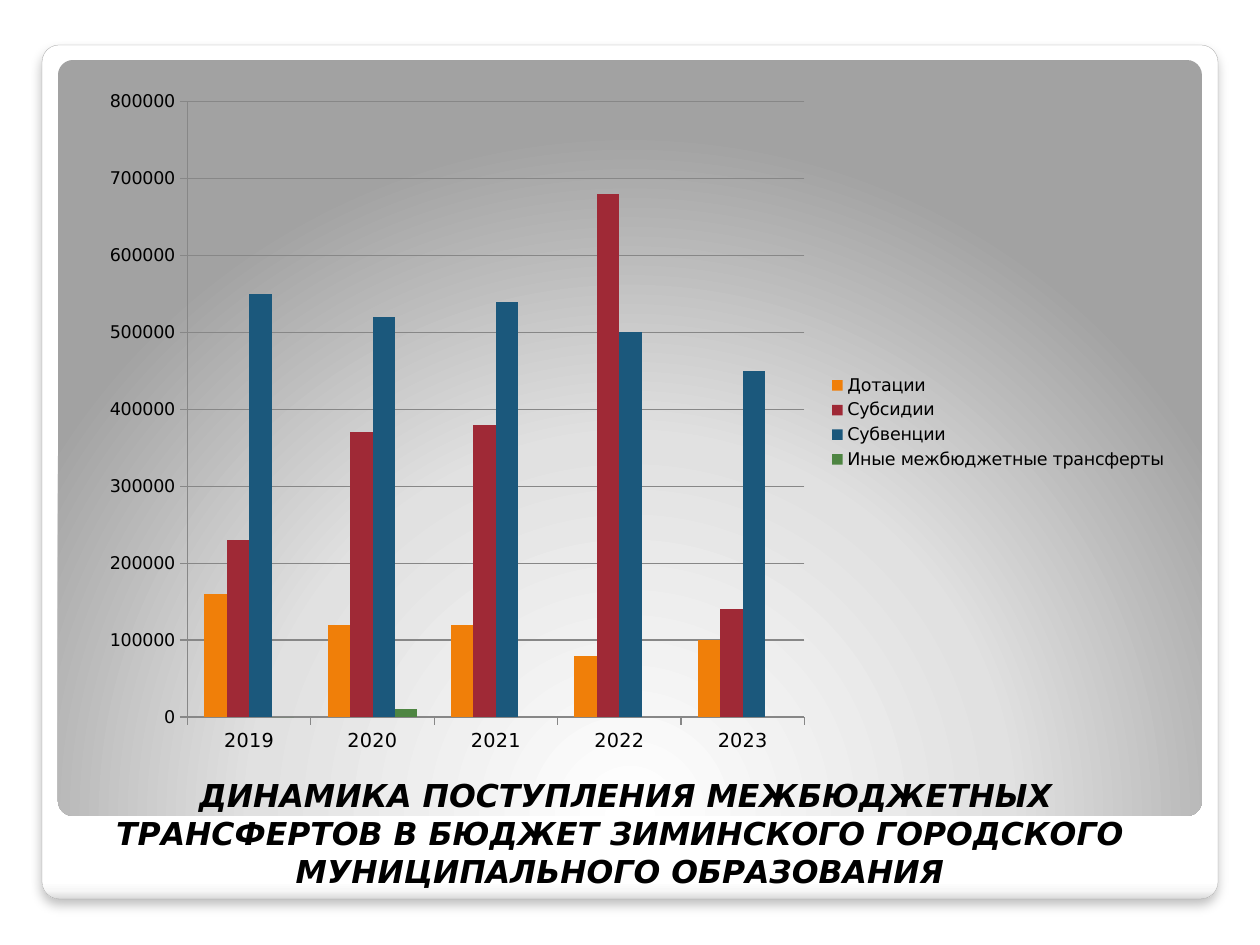
from pptx import Presentation
from pptx.chart.data import CategoryChartData
from pptx.dml.color import RGBColor
from pptx.enum.chart import XL_CHART_TYPE, XL_LEGEND_POSITION, XL_TICK_MARK
from pptx.enum.shapes import MSO_SHAPE
from pptx.enum.text import MSO_ANCHOR, MSO_AUTO_SIZE, PP_ALIGN
from pptx.oxml import parse_xml
from pptx.oxml.ns import nsdecls
from pptx.util import Emu, Pt

FONT = "DejaVu Sans"
BLACK = RGBColor(0x00, 0x00, 0x00)
EDGE = RGBColor(0xA4, 0xA4, 0xA4)
GRID = RGBColor(0x87, 0x87, 0x87)
ORANGE = RGBColor(0xF0, 0x7F, 0x09)
RED = RGBColor(0x9F, 0x29, 0x36)
BLUE = RGBColor(0x1B, 0x58, 0x7C)
GREEN = RGBColor(0x4E, 0x85, 0x42)
WHITE = RGBColor(0xFF, 0xFF, 0xFF)
MIST = RGBColor(0xF7, 0xF7, 0xF7)
PALE = RGBColor(0xDA, 0xDA, 0xDA)
LIGHT = RGBColor(0xE1, 0xE1, 0xE1)
GREY = RGBColor(0xA2, 0xA2, 0xA2)

YEARS = ["2019", "2020", "2021", "2022", "2023"]
SERIES = [
    ("Дотации", ORANGE, [160000, 120000, 120000, 80000, 100000]),
    ("Субсидии", RED, [230000, 370000, 380000, 680000, 140000]),
    ("Субвенции", BLUE, [550000, 520000, 540000, 500000, 450000]),
    ("Иные межбюджетные трансферты", GREEN, [0, 10000, None, None, None]),
]
TITLE = ("ДИНАМИКА ПОСТУПЛЕНИЯ МЕЖБЮДЖЕТНЫХ ТРАНСФЕРТОВ В БЮДЖЕТ "
         "ЗИМИНСКОГО ГОРОДСКОГО \vМУНИЦИПАЛЬНОГО ОБРАЗОВАНИЯ ")

LINEAR = '<a:lin ang="5400000" scaled="0"/>'
RADIAL = ('<a:path path="circle"><a:fillToRect l="50000" t="175000" '
          'r="50000" b="-75000"/></a:path>')


def px(num):
    return Emu(round(num * 914400 / 126))


def scale(box):
    return [px(num) for num in box]


def add_panel(slide, box, stops, course):
    """Rounded panel with a gradient fill and no line."""
    panel = slide.shapes.add_shape(MSO_SHAPE.ROUNDED_RECTANGLE, *scale(box))
    panel.adjustments[0] = 0.02
    panel.shadow.inherit = False
    panel.line.fill.background()
    panel.fill.gradient()
    props = panel._element.spPr
    marks = "".join(f'<a:gs pos="{pos * 1000}"><a:srgbClr val="{tone}"/></a:gs>'
                    for pos, tone in stops)
    props.replace(props.gradFill, parse_xml(
        f'<a:gradFill {nsdecls("a")} rotWithShape="1">'
        f'<a:gsLst>{marks}</a:gsLst>{course}</a:gradFill>'))
    return panel


def add_frame(slide, box):
    """White card with a soft shadow, and the grey panel inside it."""
    left, top, width, height = box
    card = add_panel(slide, box, [(0, WHITE), (98, WHITE), (99, MIST),
                                  (100, PALE)], LINEAR)
    card.line.color.rgb = EDGE
    card.line.width = Pt(0.16)
    card._element.spPr.effectLst.append(parse_xml(
        f'<a:outerShdw {nsdecls("a")} blurRad="76200" dist="50800" '
        'dir="5400000" rotWithShape="0"><a:srgbClr val="000000">'
        '<a:alpha val="25000"/></a:srgbClr></a:outerShdw>'))
    add_panel(slide, (left + 16, top + 15, width - 32, height - 98),
              [(0, WHITE), (55, LIGHT), (100, GREY)], RADIAL)


def set_title(slide, box):
    title = slide.shapes.title
    title.left, title.top, title.width, title.height = scale(box)
    frame = title.text_frame
    frame.text = TITLE
    frame.word_wrap = True
    frame.auto_size = MSO_AUTO_SIZE.NONE
    frame.vertical_anchor = MSO_ANCHOR.BOTTOM
    para = frame.paragraphs[0]
    para.alignment = PP_ALIGN.CENTER
    font = para.font
    font.name, font.size = FONT, Pt(18)
    font.bold = font.italic = True
    font.color.rgb = BLACK
    # Bring the title in front of the panels
    slide.shapes._spTree.append(title._element)


def add_bars(slide, box):
    data = CategoryChartData()
    data.categories = YEARS
    for name, _, vals in SERIES:
        data.add_series(name, vals)
    chart = slide.shapes.add_chart(XL_CHART_TYPE.COLUMN_CLUSTERED,
                                   *scale(box), data).chart
    chart.has_title = False
    chart.font.name, chart.font.size = FONT, Pt(10)
    chart.font.color.rgb = BLACK

    # Bars
    plot = chart.plots[0]
    plot.gap_width, plot.overlap = 150, 0
    plot.vary_by_categories = False
    for bar, (_, tone, _) in zip(plot.series, SERIES):
        bar.format.fill.solid()
        bar.format.fill.fore_color.rgb = tone

    # Axes
    years, sums = chart.category_axis, chart.value_axis
    years.tick_labels.font.size = Pt(11)
    sums.minimum_scale, sums.maximum_scale = 0, 800000
    sums.major_unit = 100000
    sums.has_major_gridlines = True
    for axis in (years, sums):
        axis.major_tick_mark = XL_TICK_MARK.OUTSIDE
        axis.format.line.color.rgb = GRID
    sums.major_gridlines.format.line.color.rgb = GRID

    # Legend
    chart.has_legend = True
    chart.legend.position = XL_LEGEND_POSITION.RIGHT
    chart.legend.include_in_layout = False


def main():
    deck = Presentation()
    deck.slide_width, deck.slide_height = px(1260), px(945)
    slide = deck.slides.add_slide(deck.slide_layouts[5])
    add_frame(slide, (42, 45, 1176, 854))
    set_title(slide, (54, 767, 1143, 129))
    add_bars(slide, (88, 78, 1092, 689))
    deck.save("out.pptx")


if __name__ == "__main__":
    main()
